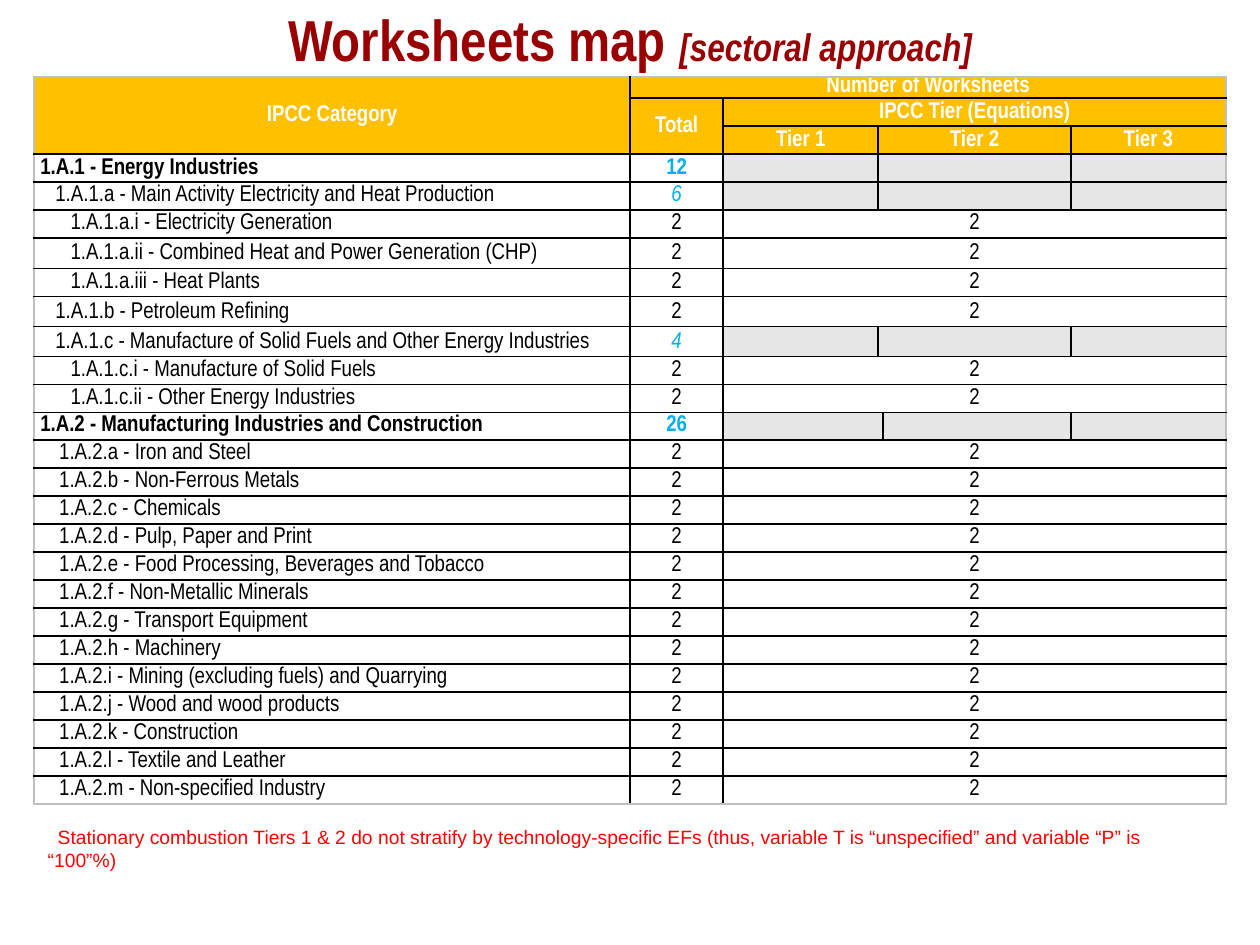
from lxml import etree
from pptx import Presentation
from pptx.dml.color import RGBColor
from pptx.enum.text import MSO_ANCHOR, PP_ALIGN
from pptx.oxml.ns import qn
from pptx.util import Inches, Pt

MAROON = RGBColor(0x99, 0x00, 0x02)
GOLD = RGBColor(0xFF, 0xC0, 0x00)
GREY = RGBColor(0xE6, 0xE6, 0xE6)
WHITE = RGBColor(0xFF, 0xFF, 0xFF)
BLACK = RGBColor(0x00, 0x00, 0x00)
BLUE = RGBColor(0x00, 0xB0, 0xF0)
RED = RGBColor(0xFF, 0x00, 0x00)
EDGE = RGBColor(0xBF, 0xBF, 0xBF)
NARROW = "Arial Narrow"

# Category, total, level: 0 section, 1 group, 2 leaf, 3 leaf of 1.A.2
ROWS = [
    ("1.A.1 - Energy Industries", 12, 0),
    ("1.A.1.a - Main Activity Electricity and Heat Production", 6, 1),
    ("1.A.1.a.i - Electricity Generation", 2, 2),
    ("1.A.1.a.ii - Combined Heat and Power Generation (CHP)", 2, 2),
    ("1.A.1.a.iii - Heat Plants", 2, 2),
    ("1.A.1.b - Petroleum Refining", 2, 1),
    ("1.A.1.c - Manufacture of Solid Fuels and Other Energy Industries", 4, 1),
    ("1.A.1.c.i - Manufacture of Solid Fuels", 2, 2),
    ("1.A.1.c.ii - Other Energy Industries", 2, 2),
    ("1.A.2 - Manufacturing Industries and Construction", 26, 0),
    ("1.A.2.a - Iron and Steel", 2, 3),
    ("1.A.2.b - Non-Ferrous Metals", 2, 3),
    ("1.A.2.c - Chemicals", 2, 3),
    ("1.A.2.d - Pulp, Paper and Print", 2, 3),
    ("1.A.2.e - Food Processing, Beverages and Tobacco", 2, 3),
    ("1.A.2.f - Non-Metallic Minerals", 2, 3),
    ("1.A.2.g - Transport Equipment", 2, 3),
    ("1.A.2.h - Machinery", 2, 3),
    ("1.A.2.i - Mining (excluding fuels) and Quarrying", 2, 3),
    ("1.A.2.j - Wood and wood products", 2, 3),
    ("1.A.2.k - Construction", 2, 3),
    ("1.A.2.l - Textile and Leather", 2, 3),
    ("1.A.2.m - Non-specified Industry", 2, 3),
]
INDENTS = [0.04, 0.16, 0.28, 0.19]
COL_WIDTHS = [4.73, 0.74, 1.23, 0.04, 1.49, 1.23]
HEADER_ROWS = 3
THIN_ROWS = (0, 12)
TALL_ROWS = (6, 8, 9)
N_ROWS, N_COLS = HEADER_ROWS + len(ROWS), len(COL_WIDTHS)

prs = Presentation()
prs.slide_width, prs.slide_height = Inches(10), Inches(7.5)
s = prs.slides.add_slide(prs.slide_layouts[6])

# Title
tf = s.shapes.add_textbox(0, 0, Inches(10), Inches(0.61)).text_frame
tf.word_wrap = True
tf.vertical_anchor = MSO_ANCHOR.MIDDLE
p = tf.paragraphs[0]
p.alignment = PP_ALIGN.CENTER
p.font.name, p.font.bold, p.font.color.rgb = NARROW, True, MAROON
for text, size, italic in (("Worksheets map ", 33, False), ("[sectoral approach]", 22, True)):
    r = p.add_run()
    r.text = text
    r.font.size, r.font.italic = Pt(size), italic

# Table grid
table = s.shapes.add_table(N_ROWS, N_COLS, Inches(0.27), Inches(0.61),
                           Inches(9.46), Inches(5.72)).table
for col, width in zip(table.columns, COL_WIDTHS):
    col.width = Inches(width)
for i, row in enumerate(table.rows):
    row.height = Inches(0.17 if i in THIN_ROWS else 0.24 if i in TALL_ROWS else 2 / 9)

owner = {(i, j): (i, j) for i in range(N_ROWS) for j in range(N_COLS)}


def fill_cell(row, col, text="", rows=1, cols=1, fill=WHITE, color=BLACK,
              bold=False, italic=False, indent=None):
    cell = table.cell(row, col)
    if rows * cols > 1:
        cell.merge(table.cell(row + rows - 1, col + cols - 1))
    for i in range(row, row + rows):
        for j in range(col, col + cols):
            owner[i, j] = (row, col)
            table.cell(i, j).fill.solid()
            table.cell(i, j).fill.fore_color.rgb = fill
    cell.vertical_anchor = MSO_ANCHOR.MIDDLE
    cell.margin_left = Inches(0.01 + (indent or 0))
    cell.margin_right = Inches(0.01)
    cell.margin_top = cell.margin_bottom = 0
    p = cell.text_frame.paragraphs[0]
    p.alignment = PP_ALIGN.CENTER if indent is None else PP_ALIGN.LEFT
    if row in THIN_ROWS and rows == 1:
        p.line_spacing = 0.78
    elif row in TALL_ROWS:
        p.line_spacing = 1.07
    f = p.font
    f.name, f.size, f.color.rgb, f.bold, f.italic = NARROW, Pt(13), color, bold, italic
    if text:
        p.add_run().text = text
    else:
        # Keeps an empty cell from stretching its row
        etree.SubElement(p._p, qn("a:endParaRPr"), sz="1300")


# Header
for row, col, text, rows, cols in (
        (0, 0, "IPCC Category", 3, 1), (0, 1, "Number of Worksheets", 1, 5),
        (1, 1, "Total", 2, 1), (1, 2, "IPCC Tier (Equations)", 1, 4),
        (2, 2, "Tier 1", 1, 1), (2, 3, "Tier 2", 1, 2), (2, 5, "Tier 3", 1, 1)):
    fill_cell(row, col, text, rows, cols, GOLD, WHITE, bold=True)

# Body: subtotals have grey tier cells, leaves one value across the tiers
for i, (name, total, level) in enumerate(ROWS, HEADER_ROWS):
    subtotal, bold = total > 2, level == 0
    fill_cell(i, 0, name, bold=bold, indent=INDENTS[level])
    fill_cell(i, 1, str(total), color=BLUE if subtotal else BLACK, bold=bold,
              italic=subtotal and not bold)
    if not subtotal:
        fill_cell(i, 2, str(total), cols=4)
        continue
    tiers = ((2, 2), (4, 1), (5, 1)) if i in THIN_ROWS else ((2, 1), (3, 2), (5, 1))
    for col, cols in tiers:
        fill_cell(i, col, cols=cols, fill=GREY)

# Borders: black between cells, grey around the table
for (i, j), own in owner.items():
    cell = table.cell(i, j)
    tcPr = cell._tc.get_or_add_tcPr()
    below = i + (cell.span_height if cell.is_merge_origin else 1)
    after = j + (cell.span_width if cell.is_merge_origin else 1)
    sides = (("a:lnL", (i, j - 1)), ("a:lnR", (i, after)),
             ("a:lnT", (i - 1, j)), ("a:lnB", (below, j)))
    lines = []
    for tag, neighbour in sides:
        if owner.get(neighbour) == own:
            continue
        ln = etree.Element(qn(tag), w=str(Pt(1)))
        solid = etree.SubElement(ln, qn("a:solidFill"))
        etree.SubElement(solid, qn("a:srgbClr"), val=str(BLACK if neighbour in owner else EDGE))
        lines.append(ln)
    for pos, ln in enumerate(lines):
        tcPr.insert(pos, ln)

# Note
tf = s.shapes.add_textbox(Inches(0.28), Inches(6.5), Inches(9.45), Inches(0.29)).text_frame
tf.word_wrap = True
p = tf.paragraphs[0]
p._p.get_or_add_pPr().set("indent", str(Inches(0.08)))
p.font.name, p.font.size, p.font.color.rgb = "Arial", Pt(11), RED
p.add_run().text = ("Stationary combustion Tiers 1 & 2 do not stratify by technology-specific EFs "
                    "(thus, variable T is “unspecified” and variable “P” is “100”%)")

prs.save("out.pptx")
